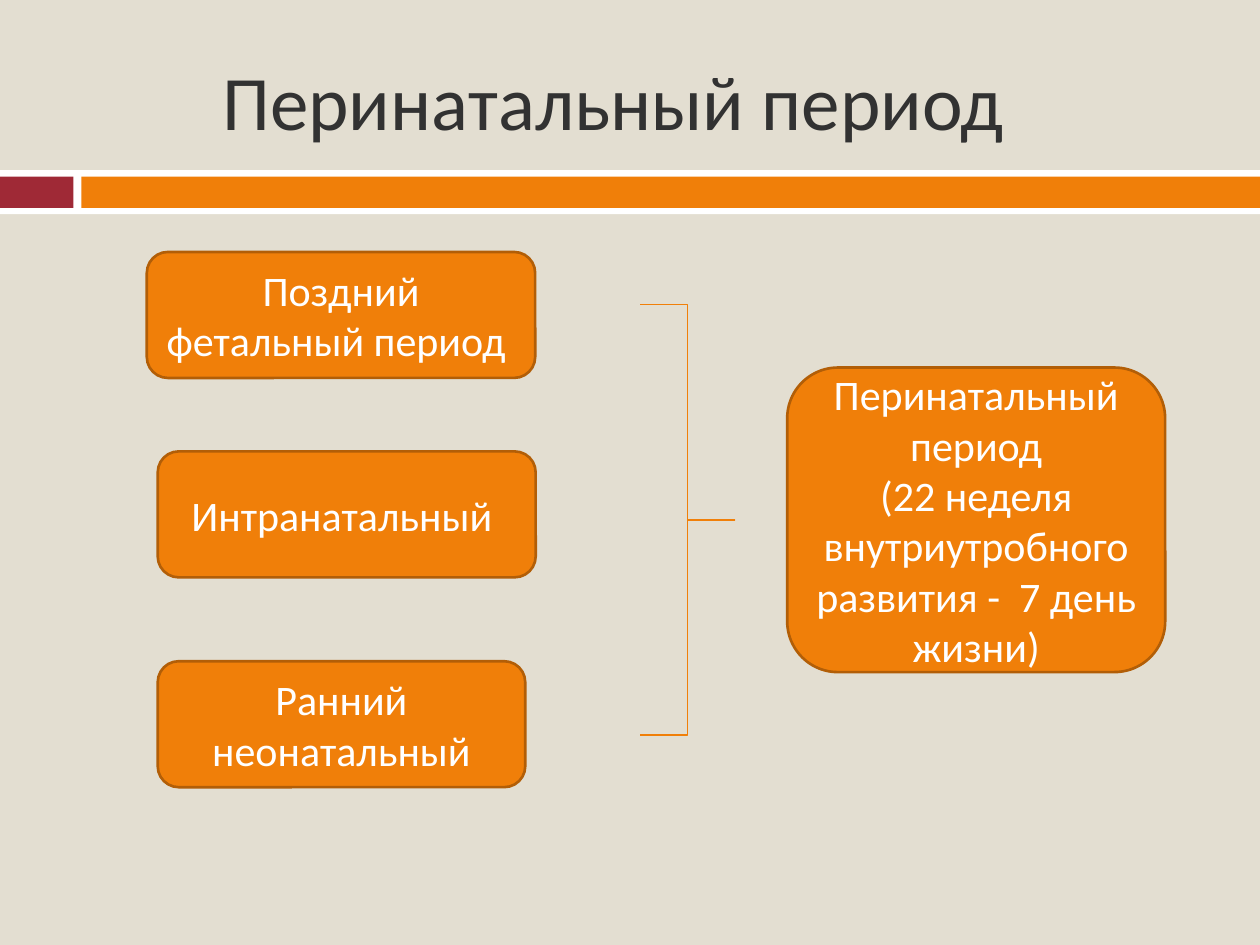
from dataclasses import dataclass

import pptx
import pptx.dml.color
import pptx.enum.shapes
import pptx.enum.text
import pptx.util

Cm = pptx.util.Cm
Pt = pptx.util.Pt
Shape = pptx.enum.shapes.MSO_SHAPE
Align = pptx.enum.text.PP_ALIGN
Anchor = pptx.enum.text.MSO_ANCHOR

FONT = "Calibri"
ORANGE, DARK_ORANGE, RED = "F07F09", "B25E07", "9F2936"
WHITE, BEIGE, CHARCOAL = "FFFFFF", "E3DED1", "323232"


@dataclass
class Area:
    """Position and size in centimetres."""
    left: float
    top: float
    width: float
    height: float

    def lengths(self) -> list:
        return [Cm(value) for value in (self.left, self.top, self.width, self.height)]


@dataclass
class Band:
    area: Area
    color: str


@dataclass
class Period:
    area: Area
    lines: list[str]


BANDS = [
    Band(Area(0, 3.43, 25.4, 0.89), WHITE),
    Band(Area(0, 3.56, 1.48, 0.63), RED),
    Band(Area(1.64, 3.56, 23.76, 0.63), ORANGE),
]
PERIODS = [
    Period(Area(2.96, 5.08, 7.83, 2.54), ["Поздний фетальный период "]),
    Period(Area(3.18, 9.1, 7.62, 2.54), ["Интранатальный "]),
    Period(Area(3.18, 13.33, 7.41, 2.54), ["Ранний неонатальный"]),
    Period(Area(15.87, 7.41, 7.62, 6.14),
           ["Перинатальный период", "(22 неделя внутриутробного развития -  7 день жизни)"]),
]
BRACE = Area(12.91, 6.14, 1.9, 8.68)


def rgb(color: str) -> pptx.dml.color.RGBColor:
    return pptx.dml.color.RGBColor.from_string(color)


def fill_solid(fill, color: str) -> None:
    fill.solid()
    fill.fore_color.rgb = rgb(color)


def write_lines(frame, lines: list[str], size: float, color: str, alignment) -> None:
    frame.word_wrap = True
    frame.vertical_anchor = Anchor.MIDDLE
    for index, line in enumerate(lines):
        para = frame.paragraphs[0] if index == 0 else frame.add_paragraph()
        para.alignment = alignment
        span = para.add_run()
        span.text = line
        for name, value in {"name": FONT, "size": Pt(size)}.items():
            setattr(span.font, name, value)
        span.font.color.rgb = rgb(color)


def add_plain_shape(page, kind, area: Area):
    shape = page.shapes.add_shape(kind, *area.lengths())
    shape.shadow.inherit = False
    return shape


def draw_band(page, band: Band) -> None:
    shape = add_plain_shape(page, Shape.RECTANGLE, band.area)
    fill_solid(shape.fill, band.color)
    shape.line.fill.background()


def draw_period(page, period: Period) -> None:
    box = add_plain_shape(page, Shape.ROUNDED_RECTANGLE, period.area)
    fill_solid(box.fill, ORANGE)
    fill_solid(box.line.fill, DARK_ORANGE)
    box.line.width = Pt(1.5)
    write_lines(box.text_frame, period.lines, 24, WHITE, Align.CENTER)


def draw_square_brace(page, area: Area) -> None:
    brace = add_plain_shape(page, Shape.RIGHT_BRACE, area)
    brace.adjustments[0] = 0
    brace.adjustments[1] = 0.5
    brace.fill.background()
    fill_solid(brace.line.fill, ORANGE)
    brace.line.width = Pt(0.79)


def place_title(page, text: str, area: Area) -> None:
    title = page.shapes.title
    for name, value in zip(("left", "top", "width", "height"), area.lengths()):
        setattr(title, name, value)
    write_lines(title.text_frame, [text], 44, CHARCOAL, Align.LEFT)


def main() -> None:
    deck = pptx.Presentation()
    deck.slide_width, deck.slide_height = Cm(25.4), Cm(19.05)
    page = deck.slides.add_slide(deck.slide_layouts[5])
    fill_solid(page.background.fill, BEIGE)

    place_title(page, "Перинатальный период", Area(4.23, 0.64, 20.11, 2.75))
    for band in BANDS:
        draw_band(page, band)
    for period in PERIODS:
        draw_period(page, period)
    draw_square_brace(page, BRACE)

    deck.save("out.pptx")


if __name__ == "__main__":
    main()
